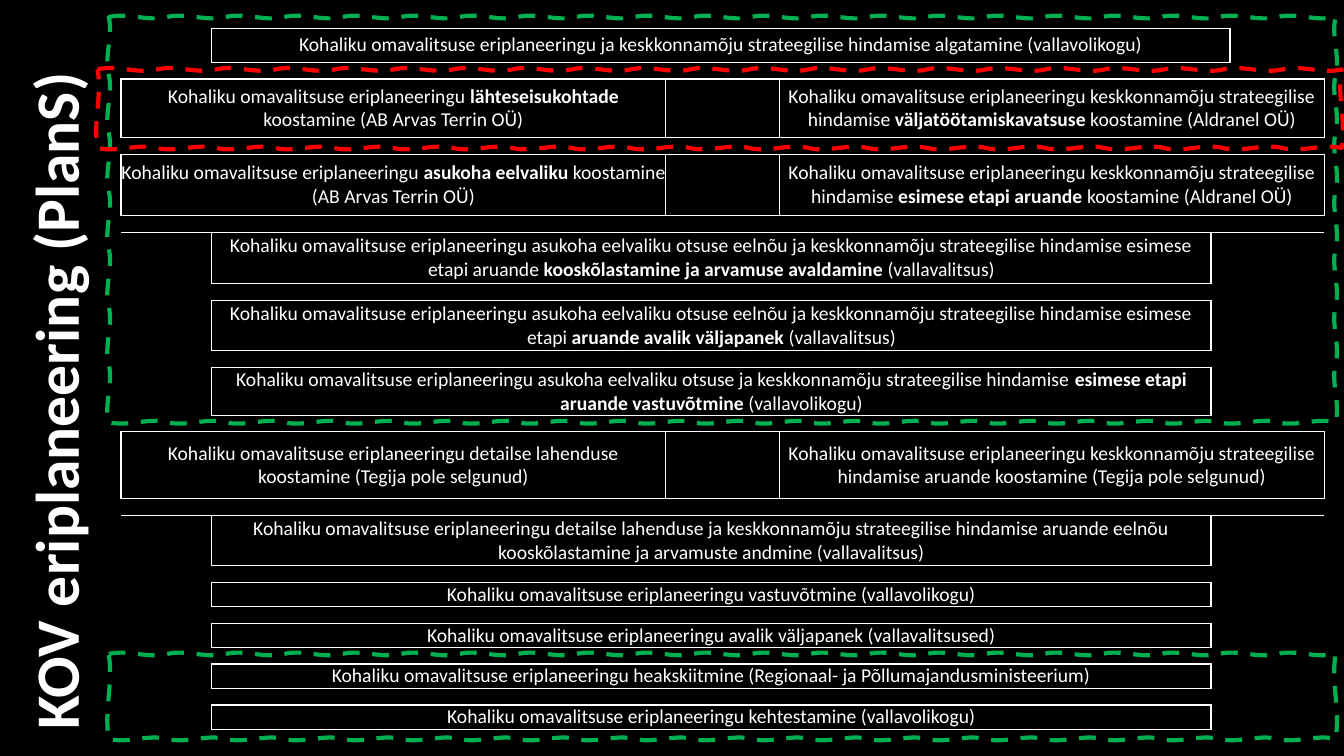
from lxml import etree
from pptx import Presentation
from pptx.dml.color import RGBColor
from pptx.enum.dml import MSO_LINE
from pptx.enum.text import MSO_ANCHOR, PP_ALIGN
from pptx.oxml.ns import qn
from pptx.util import Cm, Pt

DASH = MSO_LINE.DASH
MIDDLE = MSO_ANCHOR.MIDDLE
LEFT = PP_ALIGN.LEFT
CENTER = PP_ALIGN.CENTER
WHITE, BLACK, GREEN, RED = "FFFFFF", "000000", "00B050", "FF0000"


def paint(item, tint):
    item.rgb = RGBColor.from_string(tint)


def write(para, text, look):
    for i, part in enumerate(text.split("*")):
        run = para.add_run()
        run.text = part
        for key, val in look.items():
            setattr(run.font, key, val)
        run.font.bold = look["bold"] or i % 2 == 1
        paint(run.font.color, WHITE)


deck = Presentation()
deck.slide_width, deck.slide_height = Cm(33.87), Cm(19.05)
slide = deck.slides.add_slide(deck.slide_layouts[5])
ground = slide.background.fill
ground.solid()
paint(ground.fore_color, BLACK)

title = slide.shapes.title
place = {"left": Cm(-14.58), "top": Cm(1.57), "width": Cm(32.13), "height": Cm(1.98), "rotation": 270}
for key, val in place.items():
    setattr(title, key, val)
title.text_frame.vertical_anchor = MIDDLE
head = title.text_frame.paragraphs[0]
head.alignment, head.line_spacing = LEFT, 0.9
write(head, "KOV eriplaneering (PlanS)", {"name": "Calibri", "size": Pt(44), "bold": True})

KOV = "Kohaliku omavalitsuse eriplaneeringu "
KSH = "keskkonnamõju strateegilise hindamise "
SITE = KOV + "asukoha eelvaliku otsuse "
WIDE, MAIN, SIDE, REST = (1, 4), (1, 3), (0, 1), (3, 5)
steps = [
    (0.86, {WIDE: KOV + "ja " + KSH + "algatamine (vallavolikogu)"}),
    (1.48, {SIDE: KOV + "*lähteseisukohtade *koostamine (AB Arvas Terrin OÜ)",
            REST: KOV + KSH + "*väljatöötamiskavatsuse* koostamine (Aldranel OÜ)"}),
    (1.54, {SIDE: KOV + "*asukoha eelvaliku *koostamine (AB Arvas Terrin OÜ)",
            REST: KOV + KSH + "*esimese etapi aruande *koostamine (Aldranel OÜ)"}),
    (1.3, {MAIN: SITE + "eelnõu ja " + KSH + "esimese etapi aruande "
           "*kooskõlastamine ja arvamuse avaldamine *(vallavalitsus)"}),
    (1.27, {MAIN: SITE + "eelnõu ja " + KSH + "esimese etapi *aruande avalik väljapanek *(vallavalitsus)"}),
    (1.2, {MAIN: SITE + "ja " + KSH + "*esimese etapi aruande vastuvõtmine *(vallavolikogu)"}),
    (1.68, {SIDE: KOV + "detailse lahenduse koostamine (Tegija pole selgunud)",
            REST: KOV + KSH + "aruande koostamine (Tegija pole selgunud)"}),
    (1.27, {MAIN: KOV + "detailse lahenduse ja " + KSH + "aruande eelnõu "
            "kooskõlastamine ja arvamuste andmine (vallavalitsus)"}),
    (0.61, {MAIN: KOV + "vastuvõtmine (vallavolikogu)"}),
    (0.61, {MAIN: KOV + "avalik väljapanek (vallavalitsused)"}),
    (0.61, {MAIN: KOV + "heakskiitmine (Regionaal- ja Põllumajandusministeerium)"}),
    (0.61, {MAIN: KOV + "kehtestamine (vallavolikogu)"}),
]
GAP = 0.42
RULES = (5, 13)
joins = {1: [(3, 4)], 3: [(1, 2), (4, 5)]}
wide = [2.29, 11.44, 2.87, 10.87, 0.48, 2.37]
count = 2 * len(steps) - 1
tall = sum(high for high, texts in steps) + GAP * (len(steps) - 1)
frame = slide.shapes.add_table(count, len(wide), Cm(3.05), Cm(0.71), Cm(sum(wide)), Cm(tall))
grid = frame.table
grid.first_row = grid.horz_banding = False
frame._element.find(".//" + qn("a:tableStyleId")).text = "{2D5ABB26-0587-4C30-8999-92F81FD0307C}"
for col, size in zip(grid.columns, wide):
    col.width = Cm(size)

for row in range(count):
    high, texts = steps[row // 2] if row % 2 == 0 else (GAP, {})
    grid.rows[row].height = Cm(high)
    spans = list(texts)
    edges = dict.fromkeys(range(len(wide)), "B" if row in RULES else "")
    for first, last in spans + ([(2, 2)] if SIDE in texts else []):
        for col in range(first, last + 1):
            edges[col] = "LRTB" if col == first else "RTB" if col == last else "TB"
    if MAIN in texts:
        spans.append((4, 5))
    if row % 2:
        spans += joins.get(row, [(0, 5)])
    for first, last in spans:
        grid.cell(row, first).merge(grid.cell(row, last))
    for col, sides in edges.items():
        cell = grid.cell(row, col)
        for key in ("left", "right", "top", "bottom"):
            setattr(cell, "margin_" + key, 0)
        cell.vertical_anchor = MIDDLE
        props = cell._tc.get_or_add_tcPr()
        for side in sides:
            line = etree.SubElement(props, qn("a:ln" + side), w=str(Pt(1)))
            solid = etree.SubElement(line, qn("a:solidFill"))
            etree.SubElement(solid, qn("a:srgbClr"), val=WHITE)
        cell.fill.background()
        etree.SubElement(cell.text_frame.paragraphs[0]._p, qn("a:endParaRPr"), sz="400")
    for (first, last), text in texts.items():
        para = grid.cell(row, first).text_frame.paragraphs[0]
        para.alignment = CENTER
        write(para, text, {"name": "Calibri", "size": Pt(14), "bold": False})

STEP = 1.5
WAVE = 0.12
loops = [
    (2.74, 0.43, 33.66, 10.64, GREEN),
    (2.46, 1.75, 33.81, 3.73, RED),
    (2.74, 16.48, 33.66, 18.62, GREEN),
]
for left, top, right, low, tint in loops:
    dots = [(Cm(left), Cm(top))]
    ends = [(left, top), (right, top), (right, low), (left, low)]
    for (ax, ay), (bx, by) in zip(ends, ends[1:] + ends[:1]):
        parts = round((abs(bx - ax) + abs(by - ay)) / STEP)
        for i in range(1, 3 * parts + 1):
            share = i / (3 * parts)
            wave = (0, -WAVE, WAVE)[i % 3]
            x, y = ax + (bx - ax) * share, ay + (by - ay) * share
            dots.append((Cm(x), Cm(y + wave)) if ay == by else (Cm(x + wave), Cm(y)))
    path = slide.shapes.build_freeform(*dots[0])
    path.add_line_segments(dots[1:], close=True)
    ring = path.convert_to_shape()
    lines = list(ring._element.iter(qn("a:lnTo")))
    for i in range(0, len(lines), 3):
        curve = etree.Element(qn("a:cubicBezTo"))
        lines[i].addprevious(curve)
        for line in lines[i:i + 3]:
            curve.append(line[0])
            line.getparent().remove(line)
    ring.shadow.inherit = False
    ring.fill.background()
    paint(ring.line.color, tint)
    for key, val in {"width": Pt(3), "dash_style": DASH}.items():
        setattr(ring.line, key, val)

deck.save("out.pptx")
